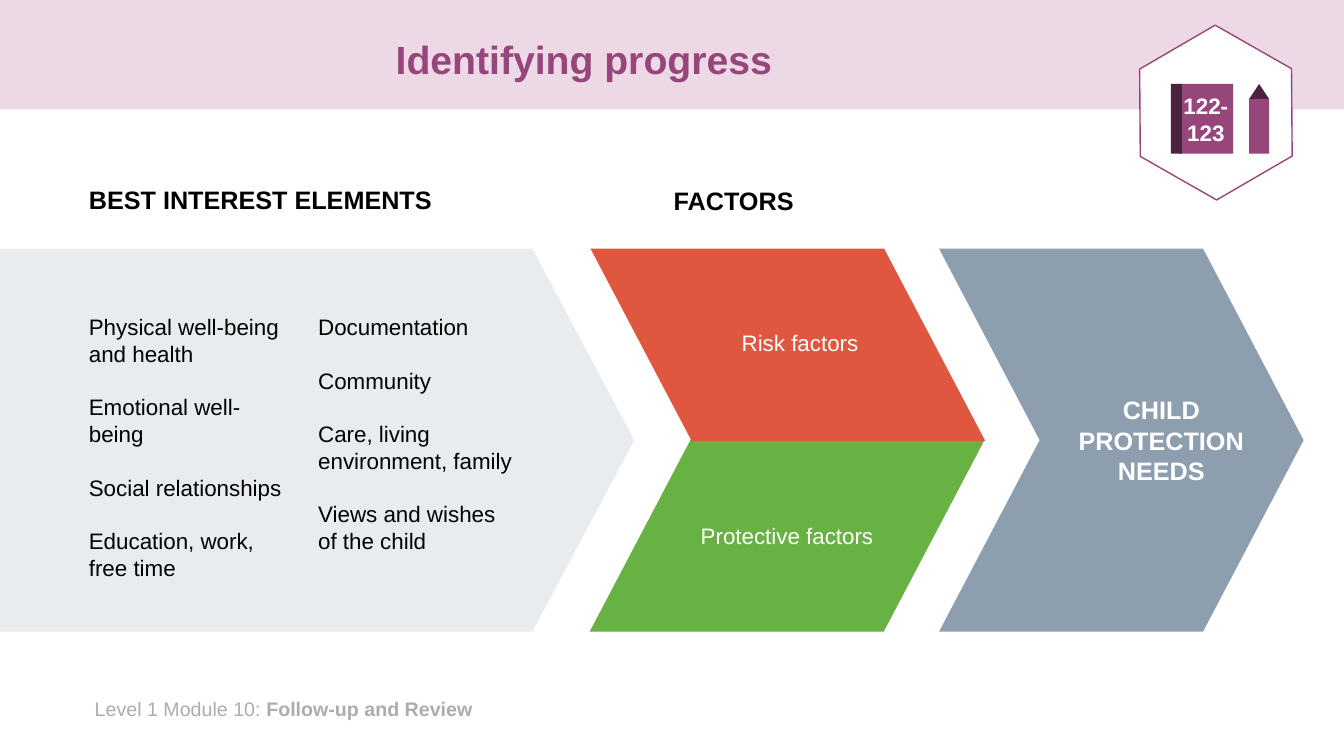
from pptx import Presentation
from pptx import util as u
from pptx.dml.color import RGBColor
from pptx.enum import shapes, text

COLOURS = {
    "band": "EDD8E6", "plum": "97467C", "dark plum": "4C233E",
    "elements": "E8ECEF", "risk": "E05740", "protective": "68B143",
    "needs": "8D9EAE", "footer": "AFABAB", "black": "000000", "white": "FFFFFF",
}
COLUMNS, ROWS = 16, 9
CELL = u.Inches(13.33) / COLUMNS
FLOW_TOP, FLOW_HEIGHT = 2.96, 4.56
FORM = shapes.MSO_SHAPE
LEFT, CENTRE = text.PP_ALIGN.LEFT, text.PP_ALIGN.CENTER
ELEMENTS = [
    ["Physical well-being and health", "Emotional well-being",
     "Social relationships", "Education, work, free time"],
    ["Documentation", "Community", "Care, living environment, family",
     "Views and wishes of the child"],
]


def colour(name):
    return RGBColor.from_string(COLOURS[name])


def grid(*cells):
    """Turn counts of square grid cells into lengths."""
    return [u.Emu(round(cell * CELL)) for cell in cells]


def write(box, lines, size, ink, bold=False, align=LEFT, gap=0, middle=False):
    """Fill a box with one paragraph for each line."""
    frame = box.text_frame
    frame.word_wrap = True
    frame.vertical_anchor = text.MSO_ANCHOR.MIDDLE if middle else text.MSO_ANCHOR.TOP
    for index, line in enumerate(lines):
        para = frame.paragraphs[0] if index == 0 else frame.add_paragraph()
        para.text = line
        para.alignment = align
        para.space_after = u.Pt(gap)
        para.font.name = "Arial"
        para.font.size = u.Pt(size)
        para.font.bold = bold
        para.font.color.rgb = colour(ink)
    return frame


def add_label(page, place, lines, size, ink, **style):
    return write(page.shapes.add_textbox(*grid(*place)), lines, size, ink, **style)


def add_form(page, form, place, fill, adjust=None, outline=None):
    shape = page.shapes.add_shape(form, *grid(*place))
    shape.shadow.inherit = False
    shape.fill.solid()
    shape.fill.fore_color.rgb = colour(fill)
    if adjust is not None:
        shape.adjustments[0] = adjust
    if outline:
        shape.line.color.rgb = colour(outline)
        shape.line.width = u.Pt(1)
    else:
        shape.line.fill.background()
    return shape


def add_header_and_footer(page):
    add_form(page, FORM.RECTANGLE, (0, 0, COLUMNS, 1.3), "band")
    title = add_label(page, (0.05, 0.16, 13.8, 1.14), ["Identifying progress"], 28,
                      "plum", bold=True, align=CENTRE, middle=True)
    title.paragraphs[0].line_spacing = 0.9
    footer = add_label(page, (1.01, 8.24, 5.46, 0.41), ["Level 1 Module 10: "], 14, "footer")
    span = footer.paragraphs[0].add_run()
    span.text = "Follow-up and Review"
    span.font.bold = True


def add_elements(page):
    add_form(page, FORM.PENTAGON, (0, FLOW_TOP, 7.55, FLOW_HEIGHT), "elements", 0.266)
    add_label(page, (0.94, 2.14, 5.9, 0.48), ["BEST INTEREST ELEMENTS"], 18, "black", bold=True)
    for left, lines in zip((0.94, 3.67), ELEMENTS):
        add_label(page, (left, 3.67, 2.64, 3.35), lines, 16, "black", gap=19)


def add_factors(page):
    half = FLOW_HEIGHT / 2
    add_label(page, (6.97, 2.15, 3.53, 0.48), ["FACTORS"], 18, "black", bold=True, align=CENTRE)
    protective = add_form(page, FORM.PARALLELOGRAM, (7.02, FLOW_TOP + half, 4.7, half),
                          "protective", 0.526)
    write(protective, ["Protective factors"], 16, "white", align=CENTRE, middle=True)
    risk = add_form(page, FORM.PARALLELOGRAM, (7.03, FLOW_TOP, 4.7, half + 0.01), "risk", 0.526)
    risk.element.spPr.xfrm.set("flipV", "1")
    add_label(page, (8.38, 3.86, 2.29, 0.44), ["Risk factors"], 16, "white", align=CENTRE)


def add_needs(page):
    add_form(page, FORM.CHEVRON, (11.18, FLOW_TOP, 4.34, FLOW_HEIGHT), "needs", 0.276)
    add_label(page, (12.68, 4.64, 2.29, 1.21), ["CHILD PROTECTION NEEDS"], 18, "white",
              bold=True, align=CENTRE)


def add_page_badge(page):
    """Draw the hexagon with the workbook and pencil."""
    badge = add_form(page, FORM.HEXAGON, (13.43, 0.44, 2.09, 1.8), "white", 0.29, "plum")
    badge.rotation = 29.7
    book = add_form(page, FORM.RECTANGLE, (14.03, 1, 0.65, 0.83), "plum")
    frame = write(book, ["122-", "123"], 16, "white", bold=True, align=CENTRE, middle=True)
    frame.word_wrap = False
    add_form(page, FORM.RECTANGLE, (13.94, 1, 0.13, 0.83), "dark plum")
    add_form(page, FORM.ISOSCELES_TRIANGLE, (14.87, 1, 0.24, 0.18), "dark plum")
    add_form(page, FORM.RECTANGLE, (14.87, 1.18, 0.24, 0.65), "plum")


def main():
    deck = Presentation()
    deck.slide_width, deck.slide_height = grid(COLUMNS, ROWS)
    page = deck.slides.add_slide(deck.slide_layouts[6])
    add_header_and_footer(page)
    add_elements(page)
    add_factors(page)
    add_needs(page)
    add_page_badge(page)
    deck.save("out.pptx")


if __name__ == "__main__":
    main()
